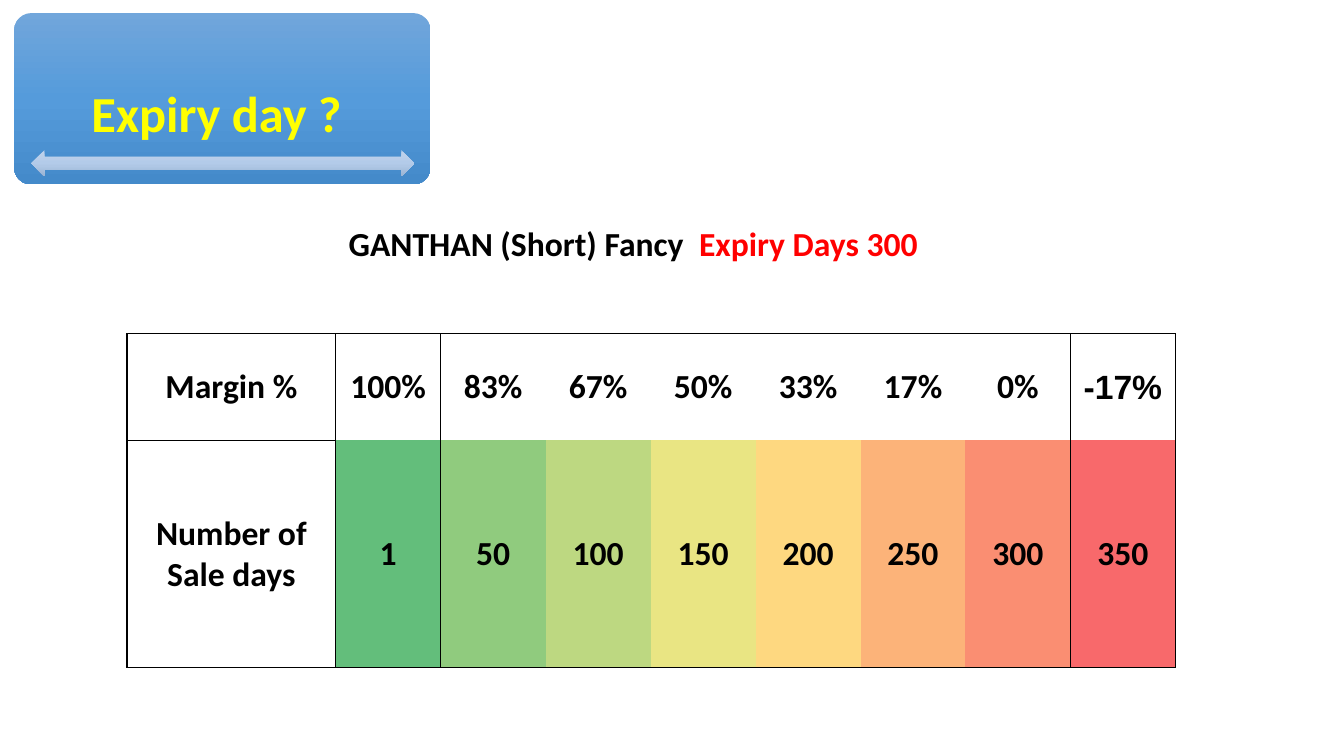
import pptx
import pptx.util
import pptx.oxml
import pptx.oxml.ns
from pptx.dml.color import RGBColor
from pptx.enum.shapes import MSO_SHAPE
from pptx.enum.text import MSO_ANCHOR, MSO_AUTO_SIZE, PP_ALIGN

SLIDE_WIDTH = pptx.util.Inches(13.33)
SLIDE_HEIGHT = pptx.util.Inches(7.5)

BLACK = RGBColor(0x00, 0x00, 0x00)
RED = RGBColor(0xFF, 0x00, 0x00)
YELLOW = RGBColor(0xFF, 0xFF, 0x00)
BANNER_BLUES = [RGBColor(0x71, 0xA6, 0xDB), RGBColor(0x55, 0x9B, 0xDB), RGBColor(0x44, 0x8A, 0xCA)]
ARROW_BLUES = [RGBColor(0xC0, 0xD2, 0xEB), RGBColor(0xB3, 0xCB, 0xE9), RGBColor(0x9B, 0xB4, 0xD3)]
HEAT_SCALE = [
    RGBColor(0x63, 0xBE, 0x7B), RGBColor(0x90, 0xCB, 0x7E),
    RGBColor(0xBD, 0xD8, 0x81), RGBColor(0xE9, 0xE5, 0x83),
    RGBColor(0xFE, 0xD8, 0x80), RGBColor(0xFC, 0xB3, 0x79),
    RGBColor(0xFA, 0x8E, 0x72), RGBColor(0xF8, 0x69, 0x6B),
]

# Boxes as left, top, width, height in percent of the slide
BANNER_BOX = (1.05, 1.73, 30.98, 22.67)
TITLE_BOX = (1.05, 10.8, 30.98, 9.07)
ARROW_BOX = (2.33, 19.87, 28.51, 3.47)
CAPTION_BOX = (25.21, 28.8, 48.61, 6.67)
TABLE_CORNER = (9.45, 44.13)
LABEL_WIDTH, DAY_WIDTH = 15.53, 7.81
ROW_HEIGHTS = (14.13, 30)

MARGINS = ["Margin %", "100%", "83%", "67%", "50%", "33%", "17%", "0%", "-17%"]
SALE_DAYS = ["Number of Sale days", "1", "50", "100", "150", "200", "250", "300", "350"]
BODY_FORMAT = {"name": "Calibri", "size": pptx.util.Pt(24), "bold": True}
TITLE_FORMAT = {**BODY_FORMAT, "size": pptx.util.Pt(36)}
CELL_FORMAT = {
    "vertical_anchor": MSO_ANCHOR.MIDDLE,
    "margin_left": pptx.util.Inches(0.01),
    "margin_right": pptx.util.Inches(0.01),
    "margin_top": pptx.util.Inches(0.01),
    "margin_bottom": 0,
}
NO_STYLE = "{2D5ABB26-0587-4C30-8999-92F81FD0307C}"


def across(percent):
    return round(SLIDE_WIDTH * percent / 100)


def down(percent):
    return round(SLIDE_HEIGHT * percent / 100)


def place(box):
    left, top, width, height = box
    return across(left), down(top), across(width), down(height)


def apply(target, values):
    for attribute, value in values.items():
        setattr(target, attribute, value)


def write(paragraph, words, color, values):
    run = paragraph.add_run()
    run.text = words
    apply(run.font, values)
    run.font.color.rgb = color


def add_gradient_shape(slide, preset, box, colors):
    shape = slide.shapes.add_shape(preset, *place(box))
    shape.shadow.inherit = False
    shape.line.fill.background()
    stops = "".join(
        f'<a:gs pos="{50000 * step}"><a:srgbClr val="{color}"/></a:gs>'
        for step, color in enumerate(colors)
    )
    gradient = pptx.oxml.parse_xml(
        f'<a:gradFill {pptx.oxml.ns.nsdecls("a")} rotWithShape="1">'
        f'<a:gsLst>{stops}</a:gsLst><a:lin ang="5400000" scaled="0"/></a:gradFill>'
    )
    shape._element.spPr.find(pptx.oxml.ns.qn("a:prstGeom")).addnext(gradient)
    return shape


def add_title(slide):
    title = slide.shapes.title
    slide.shapes._spTree.append(title._element)  # in front of the banner
    apply(title, dict(zip(("left", "top", "width", "height"), place(TITLE_BOX))))
    inset = pptx.util.Inches(0.28)
    apply(title.text_frame, {
        "auto_size": MSO_AUTO_SIZE.NONE, "word_wrap": True,
        "vertical_anchor": MSO_ANCHOR.MIDDLE,
        "margin_left": inset, "margin_right": inset,
        "margin_top": inset, "margin_bottom": inset,
    })
    heading = title.text_frame.paragraphs[0]
    apply(heading, {"alignment": PP_ALIGN.CENTER, "line_spacing": 0.9})
    write(heading, "Expiry day ? ", YELLOW, TITLE_FORMAT)


def add_caption(slide):
    caption = slide.shapes.add_textbox(*place(CAPTION_BOX)).text_frame
    caption.word_wrap = True
    product_line = caption.paragraphs[0]
    write(product_line, "GANTHAN (Short) Fancy  ", BLACK, BODY_FORMAT)
    write(product_line, "Expiry Days 300", RED, BODY_FORMAT)


def set_borders(cell, sides):
    properties = cell._tc.get_or_add_tcPr()
    for order, side in enumerate(sides):
        properties.insert(order, pptx.oxml.parse_xml(
            f'<a:ln{side} {pptx.oxml.ns.nsdecls("a")} w="12700"><a:solidFill>'
            f'<a:srgbClr val="{BLACK}"/></a:solidFill></a:ln{side}>'
        ))


def border_sides(row, column, last):
    """The label column, the days up to expiry and the last day are each framed."""
    rules = {
        "L": column in (0, 1, last),
        "R": column in (0, last - 1, last),
        "T": row == 0 or column == 0,
        "B": row == 1 or column == 0,
    }
    return [side for side, drawn in rules.items() if drawn]


def add_margin_table(slide):
    last = len(MARGINS) - 1
    frame = slide.shapes.add_table(
        2, last + 1, across(TABLE_CORNER[0]), down(TABLE_CORNER[1]),
        across(LABEL_WIDTH + last * DAY_WIDTH), down(sum(ROW_HEIGHTS)),
    )
    table = frame.table
    apply(table, {"first_row": False, "horz_banding": False})
    table._tbl.tblPr.find(pptx.oxml.ns.qn("a:tableStyleId")).text = NO_STYLE
    for column, part in enumerate(table.columns):
        part.width = across(DAY_WIDTH if column else LABEL_WIDTH)
    for row, entries in enumerate((MARGINS, SALE_DAYS)):
        table.rows[row].height = down(ROW_HEIGHTS[row])
        for column, words in enumerate(entries):
            cell = table.cell(row, column)
            apply(cell, CELL_FORMAT)
            if row and column:
                cell.fill.solid()
                cell.fill.fore_color.rgb = HEAT_SCALE[column - 1]
            else:
                cell.fill.background()
            set_borders(cell, border_sides(row, column, last))
            entry = cell.text_frame.paragraphs[0]
            entry.alignment = PP_ALIGN.CENTER
            font_name = "Arial" if words.startswith("-") else "Calibri"
            write(entry, words, BLACK, {**BODY_FORMAT, "name": font_name})


def main():
    deck = pptx.Presentation()
    apply(deck, {"slide_width": SLIDE_WIDTH, "slide_height": SLIDE_HEIGHT})
    slide = deck.slides.add_slide(deck.slide_layouts.get_by_name("Title Only"))

    # Banner with the question
    banner = add_gradient_shape(slide, MSO_SHAPE.ROUNDED_RECTANGLE, BANNER_BOX, BANNER_BLUES)
    banner.adjustments[0] = 0.1
    add_title(slide)
    add_gradient_shape(slide, MSO_SHAPE.LEFT_RIGHT_ARROW, ARROW_BOX, ARROW_BLUES)

    # Product and its margin by days on sale
    add_caption(slide)
    add_margin_table(slide)
    deck.save("out.pptx")


if __name__ == "__main__":
    main()
